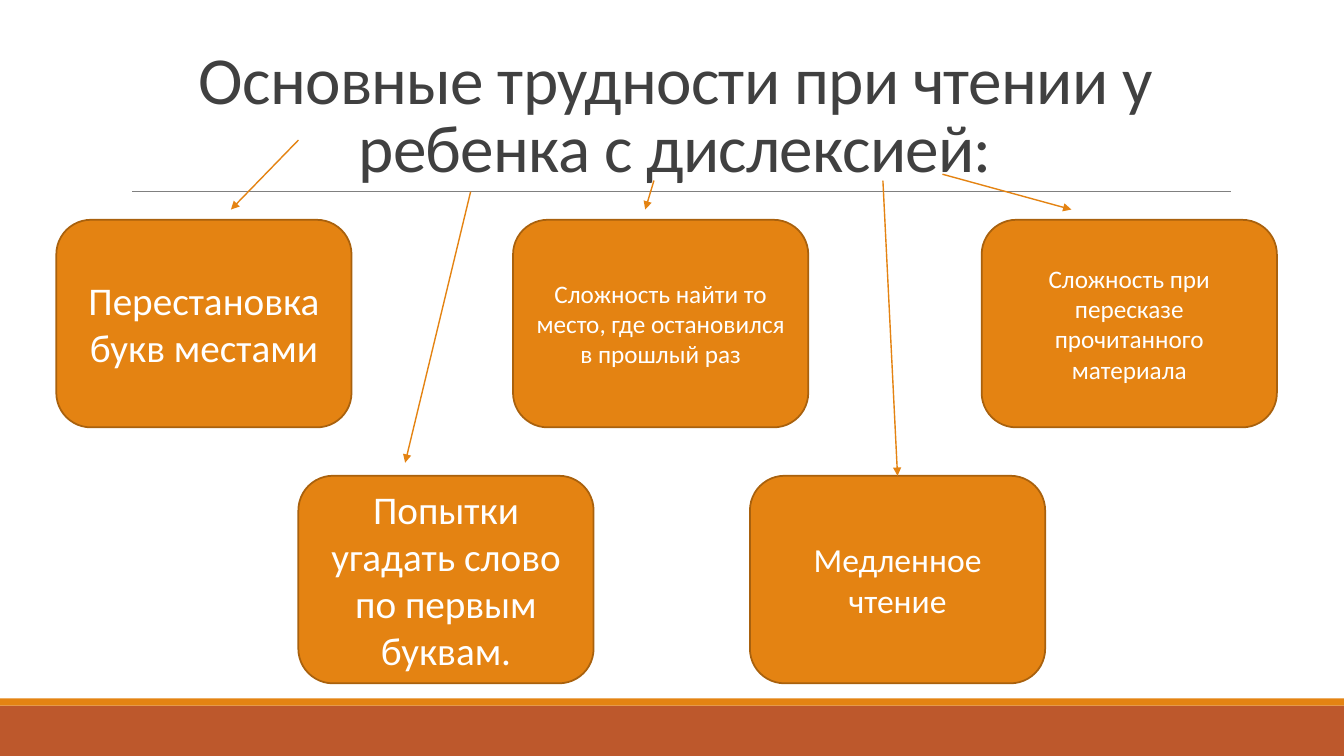
from lxml.etree import SubElement
from pptx import Presentation
from pptx.dml.color import RGBColor
from pptx.enum.shapes import MSO_CONNECTOR as Connector, MSO_SHAPE as Shape
from pptx.enum.text import MSO_ANCHOR as Anchor, PP_ALIGN as Align
from pptx.oxml.ns import qn
from pptx.util import Cm, Pt

WHITE = RGBColor(0xFF, 0xFF, 0xFF)
ORANGE = RGBColor(0xE4, 0x83, 0x12)
DARK_ORANGE = RGBColor(0xA9, 0x61, 0x0D)
RUST = RGBColor(0xBD, 0x58, 0x2C)
GRAY = RGBColor(0x80, 0x80, 0x80)
CHARCOAL = RGBColor(0x40, 0x40, 0x40)

SLIDE_WIDTH, SLIDE_HEIGHT = 33.87, 19.05
CARD_WIDTH, CARD_HEIGHT = 7.44, 5.23
UPPER_ROW, LOWER_ROW = 5.54, 11.99
ARROW_END = 5.28
TOP_SIDE = 0

CARDS = [
    ("Перестановка букв местами", 1.42, UPPER_ROW, 28),
    ("Попытки угадать слово по первым буквам.", 7.52, LOWER_ROW, 28),
    ("Сложность найти то место, где остановился в прошлый раз", 12.93, UPPER_ROW, 18),
    ("Медленное чтение", 18.9, LOWER_ROW, 24),
    ("Сложность при пересказе прочитанного материала", 24.74, UPPER_ROW, 18),
]
FREE_ARROWS = [
    (7.52, 3.53, 5.82, ARROW_END),
    (16.48, 4.55, 16.26, ARROW_END),
    (23.75, 4.39, 27, ARROW_END),
    (11.86, 4.83, 10.21, 11.66),
]


def write_text(shape, text, size, color, anchor):
    frame = shape.text_frame
    frame.word_wrap = True
    frame.vertical_anchor = anchor
    paragraph = frame.paragraphs[0]
    paragraph.text = text
    paragraph.alignment = Align.CENTER
    paragraph.font.name = "Calibri"
    paragraph.font.size = Pt(size)
    paragraph.font.color.rgb = color
    return paragraph


def add_bar(slide, top, height, color):
    bar = slide.shapes.add_shape(
        Shape.RECTANGLE, 0, Cm(top), Cm(SLIDE_WIDTH), Cm(height))
    bar.shadow.inherit = False
    bar.fill.solid()
    bar.fill.fore_color.rgb = color
    bar.line.fill.background()


def add_line(slide, start_x, start_y, end_x, end_y, color, width):
    line = slide.shapes.add_connector(
        Connector.STRAIGHT, Cm(start_x), Cm(start_y), Cm(end_x), Cm(end_y))
    line.line.color.rgb = color
    line.line.width = Pt(width)
    SubElement(line._element.spPr, qn("a:effectLst"))
    return line


def add_arrow(slide, start_x, start_y, end_x, end_y):
    arrow = add_line(slide, start_x, start_y, end_x, end_y, ORANGE, 1)
    SubElement(arrow.line._get_or_add_ln(), qn("a:tailEnd"), type="triangle")
    return arrow


def add_title(slide, text):
    title = slide.shapes.add_textbox(Cm(3.05), Cm(0.79), Cm(27.94), Cm(4.04))
    paragraph = write_text(title, text, 48, CHARCOAL, Anchor.BOTTOM)
    paragraph.line_spacing = 0.85
    paragraph.runs[0].font._element.set("spc", "-50")


def add_card(slide, text, left, top, size):
    card = slide.shapes.add_shape(
        Shape.ROUNDED_RECTANGLE, Cm(left), Cm(top), Cm(CARD_WIDTH), Cm(CARD_HEIGHT))
    card.shadow.inherit = False
    card.fill.solid()
    card.fill.fore_color.rgb = ORANGE
    card.line.color.rgb = DARK_ORANGE
    card.line.width = Pt(1.25)
    write_text(card, text, size, WHITE, Anchor.MIDDLE)
    return card


def main():
    presentation = Presentation()
    presentation.slide_width = Cm(SLIDE_WIDTH)
    presentation.slide_height = Cm(SLIDE_HEIGHT)
    slide = presentation.slides.add_slide(presentation.slide_layouts[6])

    add_bar(slide, 17.78, 1.27, RUST)
    add_bar(slide, 17.6, 0.18, ORANGE)
    add_line(slide, 3.33, 4.83, 31.01, 4.83, GRAY, 0.5)
    add_title(slide, "Основные трудности при чтении у ребенка с дислексией:")

    cards = [add_card(slide, *card) for card in CARDS]
    for arrow in FREE_ARROWS:
        add_arrow(slide, *arrow)
    slow_reading = cards[3]
    slow_reading_arrow = add_arrow(slide, 22.25, 4.55, 22.62, LOWER_ROW)
    slow_reading_arrow.end_connect(slow_reading, TOP_SIDE)

    presentation.save("out.pptx")


if __name__ == "__main__":
    main()
